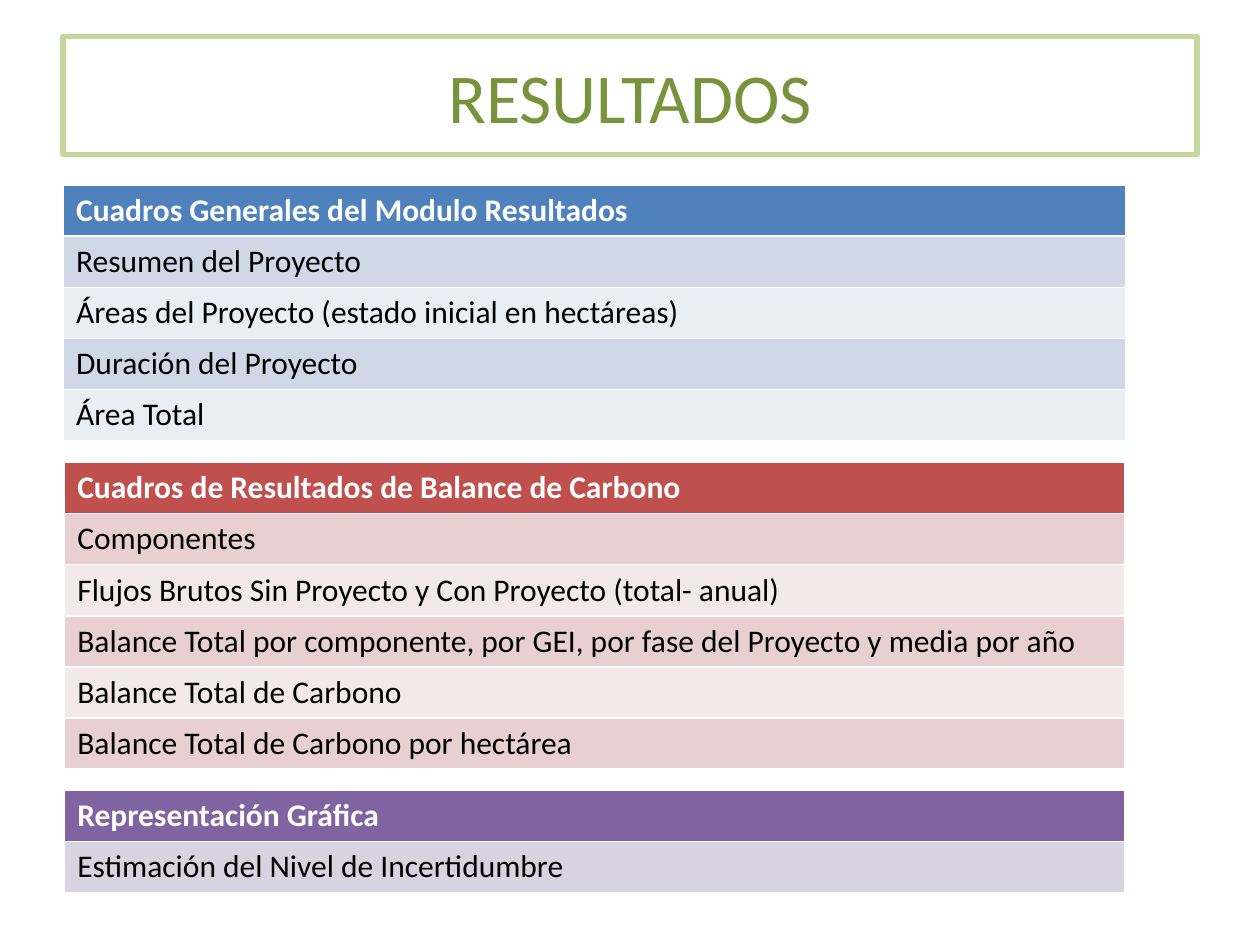
from pptx import Presentation
from pptx.dml.color import RGBColor as RGB
from pptx.enum.text import MSO_ANCHOR as ANCHOR, PP_ALIGN as ALIGN
from pptx.util import Pt

COLORS = {
    "white": "FFFFFF", "black": "000000",
    "green": "77933C", "light_green": "C3D69B",
    "blue": "4F81BD", "blue_band": "D0D8E8", "blue_pale": "E9EDF4",
    "red": "C0504D", "red_band": "E8D0D0", "red_pale": "F4E9E9",
    "purple": "8064A2", "purple_band": "D8D3E0", "purple_pale": "ECEAF0",
}
ROW_HEIGHT = 29.2


def color(name):
    return RGB.from_string(COLORS[name])


def write(tf, text, size=18, fill="black", bold=False, align=ALIGN.LEFT):
    p = tf.paragraphs[0]
    p.alignment = align
    r = p.add_run()
    r.text = text
    r.font.name = "Calibri"
    r.font.size = Pt(size)
    r.font.bold = bold
    r.font.color.rgb = color(fill)


prs = Presentation()
prs.slide_width, prs.slide_height = Pt(720), Pt(540)
s = prs.slides.add_slide(prs.slide_layouts[5])

title = s.shapes.title
title.left, title.top, title.width, title.height = Pt(36), Pt(20.7), Pt(648), Pt(67.5)
title.line.color.rgb = color("light_green")
title.line.width = Pt(3)
title.text_frame.vertical_anchor = ANCHOR.MIDDLE
write(title.text_frame, "RESULTADOS", size=40, fill="green", align=ALIGN.CENTER)

tables = [
    ("blue", 36.3, 105.8, [
        "Cuadros Generales del Modulo Resultados",
        "Resumen del Proyecto",
        "Áreas del Proyecto (estado inicial en hectáreas)",
        "Duración del Proyecto",
        "Área Total",
    ]),
    ("red", 37, 264.3, [
        "Cuadros de Resultados de Balance de Carbono",
        "Componentes",
        "Flujos Brutos Sin Proyecto y Con Proyecto (total- anual)",
        "Balance Total por componente, por GEI, por fase del Proyecto y media por año",
        "Balance Total de Carbono",
        "Balance Total de Carbono por hectárea",
    ]),
    ("purple", 37, 451.7, [
        "Representación Gráfica",
        "Estimación del Nivel de Incertidumbre",
    ]),
]

for hue, left, top, rows in tables:
    frame = s.shapes.add_table(len(rows), 1, Pt(left), Pt(top),
                               Pt(643 - left), Pt(ROW_HEIGHT * len(rows)))
    for i, text in enumerate(rows):
        header = i == 0
        cell = frame.table.cell(i, 0)
        cell.fill.solid()
        cell.fill.fore_color.rgb = color(
            hue if header else hue + ("_band" if i % 2 else "_pale"))
        write(cell.text_frame, text, fill="white" if header else "black", bold=header)

prs.save("out.pptx")
